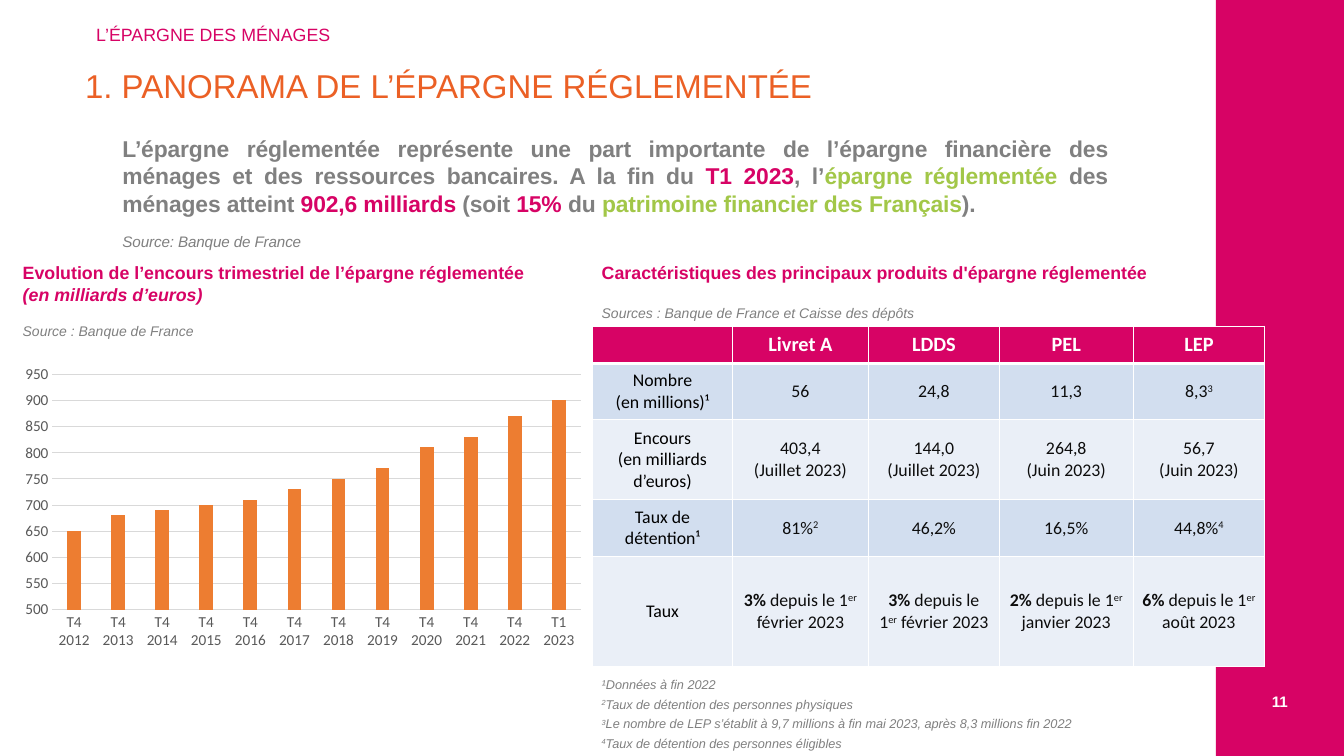
from dataclasses import dataclass

from lxml import etree
from pptx import Presentation
from pptx import util as u
from pptx.chart import data as chart_data
from pptx.dml import color
from pptx.enum import chart as chart_enum, shapes, text
from pptx.oxml import ns


@dataclass(frozen=True)
class Theme:
    heading_font: str = "Arial"
    data_font: str = "Calibri"
    pink: str = "D70365"
    orange: str = "EB6025"
    bar: str = "ED7D31"
    green: str = "A2C748"
    grey: str = "808080"
    axis: str = "595959"
    grid: str = "D9D9D9"
    ink: str = "0D0D0D"
    black: str = "000000"
    white: str = "FFFFFF"
    row_fills: tuple = ("D2DEEF", "EAEFF7")
    title: int = 26
    intro: int = 18
    table_head: int = 16
    heading: int = 14
    label: int = 12
    source: int = 11
    note: int = 10


THEME = Theme()
LEFT, CENTER, JUSTIFY = text.PP_ALIGN.LEFT, text.PP_ALIGN.CENTER, text.PP_ALIGN.JUSTIFY
RIGHT_COLUMN = 466.75

INTRO = [
    ("L’épargne réglementée représente une part importante de l’épargne financière des "
     "ménages et des ressources bancaires. A la fin du ", THEME.grey),
    ("T1 2023", THEME.pink), (", l’", THEME.grey),
    ("épargne réglementée ", THEME.green), ("des ménages atteint ", THEME.grey),
    ("902,6 milliards ", THEME.pink), ("(soit ", THEME.grey), ("15%", THEME.pink),
    (" du ", THEME.grey), ("patrimoine financier des Français", THEME.green),
    (").", THEME.grey),
]
QUARTERS = [f"T4 {year}" for year in range(2012, 2023)] + ["T1 2023"]
SAVINGS = [650, 680, 690, 700, 710, 730, 750, 770, 810, 830, 870, 900]

# Each cell is a list of paragraphs; a caret marks a superscript run, a star a bold one
PRODUCTS = ["Livret A", "LDDS", "PEL", "LEP"]
ROWS = [
    [["Nombre", "(en millions)¹"], ["56"], ["24,8"], ["11,3"], ["8,3|^3"]],
    [["Encours", "(en milliards d’euros)"], ["403,4", "(Juillet 2023)"],
     ["144,0", "(Juillet 2023)"], ["264,8", "(Juin 2023)"], ["56,7", "(Juin 2023)"]],
    [["Taux de détention¹"], ["81%|^2"], ["46,2%"], ["16,5%"], ["44,8%|^4"]],
    [["Taux"]] + [[f"*{rate} |depuis le 1|^er| {month} 2023"] for rate, month in
                  [("3%", "février"), ("3%", "février"), ("2%", "janvier"), ("6%", "août")]],
]
COLUMN_WIDTHS = [110, 107.25, 103, 105.5, 103.5]
ROW_HEIGHTS = [27.75, 44.25, 63.25, 44.5, 87]
NOTES = [
    "¹Données à fin 2022",
    "^2|Taux de détention des personnes physiques",
    "^3|Le nombre de LEP s’établit à 9,7 millions à fin mai 2023, après 8,3 millions fin 2022",
    "^4|Taux de détention des personnes éligibles",
]


def rgb(value):
    return color.RGBColor.from_string(value)


def style_font(font, size, fill, name=THEME.heading_font, bold=False, italic=False):
    font.size, font.name, font.bold, font.italic = u.Pt(size), name, bold, italic
    font.color.rgb = rgb(fill)


def add_run(paragraph, content, size, fill, **style):
    run = paragraph.add_run()
    run.text = content
    style_font(run.font, size, fill, **style)
    return run


def add_marked_runs(paragraph, content, size, fill, **style):
    for part in content.split("|"):
        run = add_run(paragraph, part.lstrip("^*"), size, fill, **style)
        if part.startswith("^"):
            run.font._element.set("baseline", "30000")
        elif part.startswith("*"):
            run.font.bold = True


def add_paragraph(frame, first=False, align=LEFT, before=0, spacing=1.0, indent=0):
    paragraph = frame.paragraphs[0] if first else frame.add_paragraph()
    properties = paragraph._p.get_or_add_pPr()
    properties.set("marL", str(u.Pt(indent)))
    properties.set("indent", "0")
    etree.SubElement(properties, ns.qn("a:buNone"))
    paragraph.alignment = align
    paragraph.space_before = u.Pt(before)
    paragraph.line_spacing = spacing
    return paragraph


def prepare_frame(shape, anchor=text.MSO_ANCHOR.TOP):
    frame = shape.text_frame
    frame.word_wrap = True
    frame.auto_size = text.MSO_AUTO_SIZE.NONE
    frame.vertical_anchor = anchor
    return frame


def place(placeholder, left, top, width, height):
    placeholder.left, placeholder.top = u.Pt(left), u.Pt(top)
    placeholder.width, placeholder.height = u.Pt(width), u.Pt(height)
    return prepare_frame(placeholder)


def add_text_box(slide, left, top, width, height, **options):
    box = slide.shapes.add_textbox(u.Pt(left), u.Pt(top), u.Pt(width), u.Pt(height))
    return prepare_frame(box, **options)


def add_rectangle(slide, left, top, width, height, fill):
    rectangle = slide.shapes.add_shape(shapes.MSO_SHAPE.RECTANGLE, u.Pt(left), u.Pt(top),
                                       u.Pt(width), u.Pt(height))
    rectangle.shadow.inherit = False
    rectangle.fill.solid()
    rectangle.fill.fore_color.rgb = rgb(fill)
    rectangle.line.fill.background()
    return rectangle


def add_side_band(slide, number):
    add_rectangle(slide, 957.6, 0, 100.8, 595.44, THEME.pink)
    frame = add_text_box(slide, 957.6, 533.5, 100.8, 38, anchor=text.MSO_ANCHOR.MIDDLE)
    add_run(add_paragraph(frame, True, CENTER), number, THEME.label, THEME.white, bold=True)


def add_section_heading(slide, left, top, width, height, lines, source, gap):
    frame = add_text_box(slide, left, top, width, height)
    for index, (line, italic) in enumerate(lines):
        add_run(add_paragraph(frame, index == 0, JUSTIFY), line, THEME.heading, THEME.pink,
                bold=True, italic=italic)
    add_run(add_paragraph(frame, before=gap), source, THEME.source, THEME.grey, italic=True)


def add_savings_chart(slide):
    values = chart_data.CategoryChartData()
    values.categories = QUARTERS
    values.add_series("Series 1", SAVINGS)
    chart = slide.shapes.add_chart(chart_enum.XL_CHART_TYPE.COLUMN_CLUSTERED, u.Pt(10.8),
                                   u.Pt(283), u.Pt(455.75), u.Pt(233.25), values).chart
    chart.has_legend = chart.has_title = False
    style_font(chart.font, THEME.note, THEME.black, THEME.data_font)
    plot = chart.plots[0]
    plot.gap_width, plot.overlap, plot.vary_by_categories = 219, -27, False
    fill = plot.series[0].format.fill
    fill.solid()
    fill.fore_color.rgb = rgb(THEME.bar)
    for axis in (chart.category_axis, chart.value_axis):
        axis.major_tick_mark = axis.minor_tick_mark = chart_enum.XL_TICK_MARK.NONE
        style_font(axis.tick_labels.font, THEME.label, THEME.axis, THEME.data_font)
    value_axis = chart.value_axis
    value_axis.minimum_scale, value_axis.maximum_scale, value_axis.major_unit = 500, 950, 50
    value_axis.format.line.fill.background()
    for line in (chart.category_axis.format.line, value_axis.major_gridlines.format.line):
        line.color.rgb, line.width = rgb(THEME.grid), u.Pt(0.75)


def set_borders(cell, bottom):
    properties = cell._tc.get_or_add_tcPr()
    for position, (side, width) in enumerate(zip("LRTB", (1, 1, 1, bottom))):
        line = etree.Element(ns.qn(f"a:ln{side}"), w=str(u.Pt(width)))
        fill = etree.SubElement(line, ns.qn("a:solidFill"))
        etree.SubElement(fill, ns.qn("a:srgbClr"), val=THEME.white)
        properties.insert(position, line)


def fill_cell(cell, lines, fill, size, ink, bold=False, bottom=1):
    cell.fill.solid()
    cell.fill.fore_color.rgb = rgb(fill)
    cell.vertical_anchor = text.MSO_ANCHOR.MIDDLE
    set_borders(cell, bottom)
    for index, line in enumerate(lines):
        paragraph = add_paragraph(cell.text_frame, index == 0, CENTER)
        add_marked_runs(paragraph, line, size, ink, name=THEME.data_font, bold=bold)


def add_products_table(slide):
    table = slide.shapes.add_table(len(ROW_HEIGHTS), len(COLUMN_WIDTHS), u.Pt(RIGHT_COLUMN),
                                   u.Pt(257), u.Pt(sum(COLUMN_WIDTHS)),
                                   u.Pt(sum(ROW_HEIGHTS))).table
    for column, width in zip(table.columns, COLUMN_WIDTHS):
        column.width = u.Pt(width)
    for row, height in zip(table.rows, ROW_HEIGHTS):
        row.height = u.Pt(height)
    for column, product in enumerate([None] + PRODUCTS):
        fill_cell(table.cell(0, column), [product] if product else [], THEME.pink,
                  THEME.table_head, THEME.white, bold=True, bottom=3)
    for row, cells in enumerate(ROWS, 1):
        for column, lines in enumerate(cells):
            fill_cell(table.cell(row, column), lines, THEME.row_fills[(row - 1) % 2],
                      THEME.heading, THEME.ink if column else THEME.black)


def add_notes(slide):
    first = add_rectangle(slide, RIGHT_COLUMN, 529.5, 478.75, 19.25, THEME.white)
    frames = [prepare_frame(first)]
    frames += [add_text_box(slide, RIGHT_COLUMN, 529.75 + 15.4 * index, 429, 19.25)
               for index in range(1, len(NOTES))]
    for frame, note in zip(frames, NOTES):
        add_marked_runs(add_paragraph(frame, True), note, THEME.note, THEME.grey, italic=True)


def main():
    presentation = Presentation()
    presentation.slide_width, presentation.slide_height = u.Pt(1058.4), u.Pt(595.44)
    slide = presentation.slides.add_slide(presentation.slide_layouts[3])
    title, intro, chapter = slide.placeholders
    add_side_band(slide, "11")

    # Chapter, title and introduction
    frame = place(chapter, 68.5, 17.25, 358.5, 21)
    add_run(add_paragraph(frame, True, spacing=0.9), "L’ÉPARGNE DES MÉNAGES",
            THEME.heading, THEME.pink)
    frame = place(title, 59.75, 51.5, 863.25, 32.5)
    add_run(add_paragraph(frame, True, spacing=0.9), "1. PANORAMA DE L’ÉPARGNE RÉGLEMENTÉE",
            THEME.title, THEME.orange)
    frame = place(intro, 68.25, 102.5, 811.5, 108.75)
    paragraph = add_paragraph(frame, True, JUSTIFY, indent=21)
    runs = [add_run(paragraph, content, THEME.intro, fill, bold=True) for content, fill in INTRO]
    runs.append(add_run(add_paragraph(frame, align=JUSTIFY, before=12, indent=21),
                        "Source: Banque de France", THEME.label, THEME.grey, italic=True))
    for run in runs:
        run.font._element.set("spc", "-10")

    # Left column: chart
    add_section_heading(slide, 10.8, 203, 416, 69,
                        [("Evolution de l’encours trimestriel de l’épargne réglementée", False),
                         ("(en milliards d’euros)", True)], "Source : Banque de France", 14)
    add_savings_chart(slide)

    # Right column: table and footnotes
    add_section_heading(slide, RIGHT_COLUMN, 202.5, 472.25, 54.75,
                        [("Caractéristiques des principaux produits d'épargne réglementée", False)],
                        "Sources : Banque de France et Caisse des dépôts", 17)
    add_products_table(slide)
    add_notes(slide)

    presentation.save("out.pptx")


if __name__ == "__main__":
    main()
